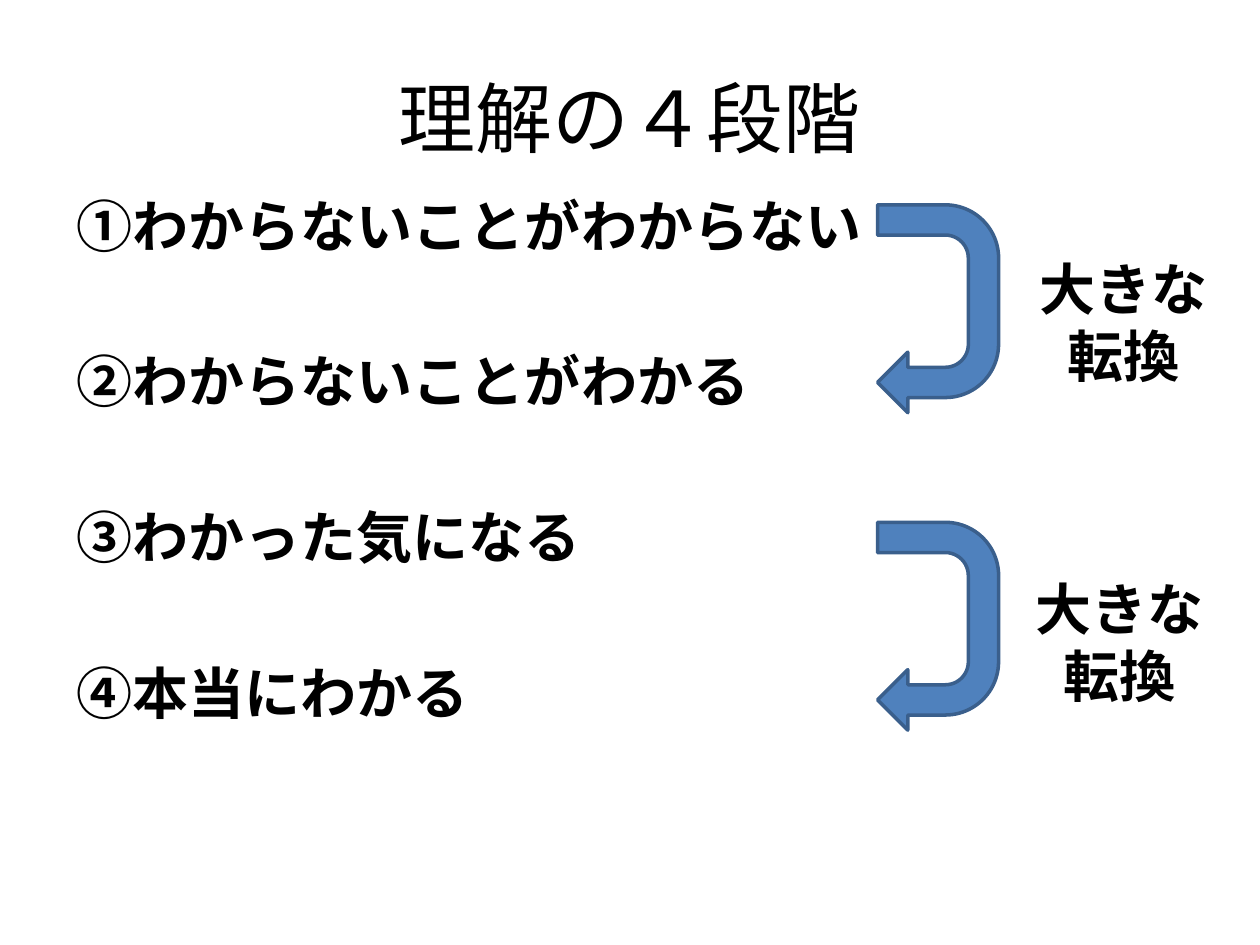
import pptx
import pptx.dml.color
import pptx.enum.shapes
import pptx.enum.text
import pptx.oxml
import pptx.oxml.ns
import pptx.util
from pptx.util import Cm, Pt

COLORS = {"text": "000000", "arrow": "4F81BD", "outline": "3A5F8C"}
FONT = "Roboto"
STAGES = [
    "①わからないことがわからない",
    "②わからないことがわかる",
    "③わかった気になる",
    "④本当にわかる",
]
TURN = ["大きな", "転換"]
ALIGN = pptx.enum.text.PP_ALIGN
ANCHOR = pptx.enum.text.MSO_ANCHOR


def rgb(name):
    return pptx.dml.color.RGBColor.from_string(COLORS[name])


def add_text(slide, lines, box, size=32, bold=True, align=ALIGN.LEFT,
             anchor=ANCHOR.TOP, gap=0, wrap=True):
    """Place one paragraph per line; gap is the space between them in points."""
    frame = slide.shapes.add_textbox(*map(Cm, box)).text_frame
    frame.word_wrap = wrap
    frame.vertical_anchor = anchor
    for index, line in enumerate(lines):
        paragraph = frame.paragraphs[0] if index == 0 else frame.add_paragraph()
        paragraph.alignment = align
        paragraph.space_before = Pt(gap if index else 0)
        run = paragraph.add_run()
        run.text = line
        run.font.size = Pt(size)
        run.font.bold = bold
        run.font.name = FONT
        run.font.color.rgb = rgb("text")
        east_asian = pptx.oxml.parse_xml(
            f'<a:ea {pptx.oxml.ns.nsdecls("a")} typeface="{FONT}"/>')
        run.font._element.find(pptx.oxml.ns.qn("a:latin")).addnext(east_asian)


def add_title(slide, box):
    add_text(slide, ["理解の４段階"], box, size=44, bold=False,
             align=ALIGN.CENTER, anchor=ANCHOR.MIDDLE)


def add_stages(slide, box):
    add_text(slide, STAGES, box, gap=50.6)


def add_turn(slide, box, label_offset):
    """Draw a downward U-turn arrow filling the box, with its label beside it."""
    left, top, width, height = box
    # The preset points sideways, so its unrotated frame swaps width and height.
    shift = (height - width) / 2
    arrow = slide.shapes.add_shape(
        pptx.enum.shapes.MSO_SHAPE.U_TURN_ARROW,
        Cm(left - shift), Cm(top + shift), Cm(height), Cm(width))
    arrow.rotation = 90
    for index, value in enumerate([0.25, 0.25, 0.25, 0.44, 1]):
        arrow.adjustments[index] = value
    arrow.shadow.inherit = False
    arrow.fill.solid()
    arrow.fill.fore_color.rgb = rgb("arrow")
    arrow.line.color.rgb = rgb("outline")
    arrow.line.width = Pt(2)

    label_x, label_y = label_offset
    add_text(slide, TURN, (left + label_x, top + label_y, 3.94, 3),
             align=ALIGN.CENTER, wrap=False)


def main():
    deck = pptx.Presentation()
    deck.slide_width, deck.slide_height = Cm(25.4), Cm(19.05)
    slide = deck.slides.add_slide(deck.slide_layouts[6])
    add_title(slide, (1.27, 0.76, 22.86, 3.18))
    add_stages(slide, (1.3, 3.73, 22.86, 11.99))
    add_turn(slide, (17.69, 4.13, 2.44, 4.19), label_offset=(2.99, 0.87))
    add_turn(slide, (17.69, 10.53, 2.44, 4.19), label_offset=(2.91, 0.93))
    deck.save("out.pptx")


if __name__ == "__main__":
    main()
